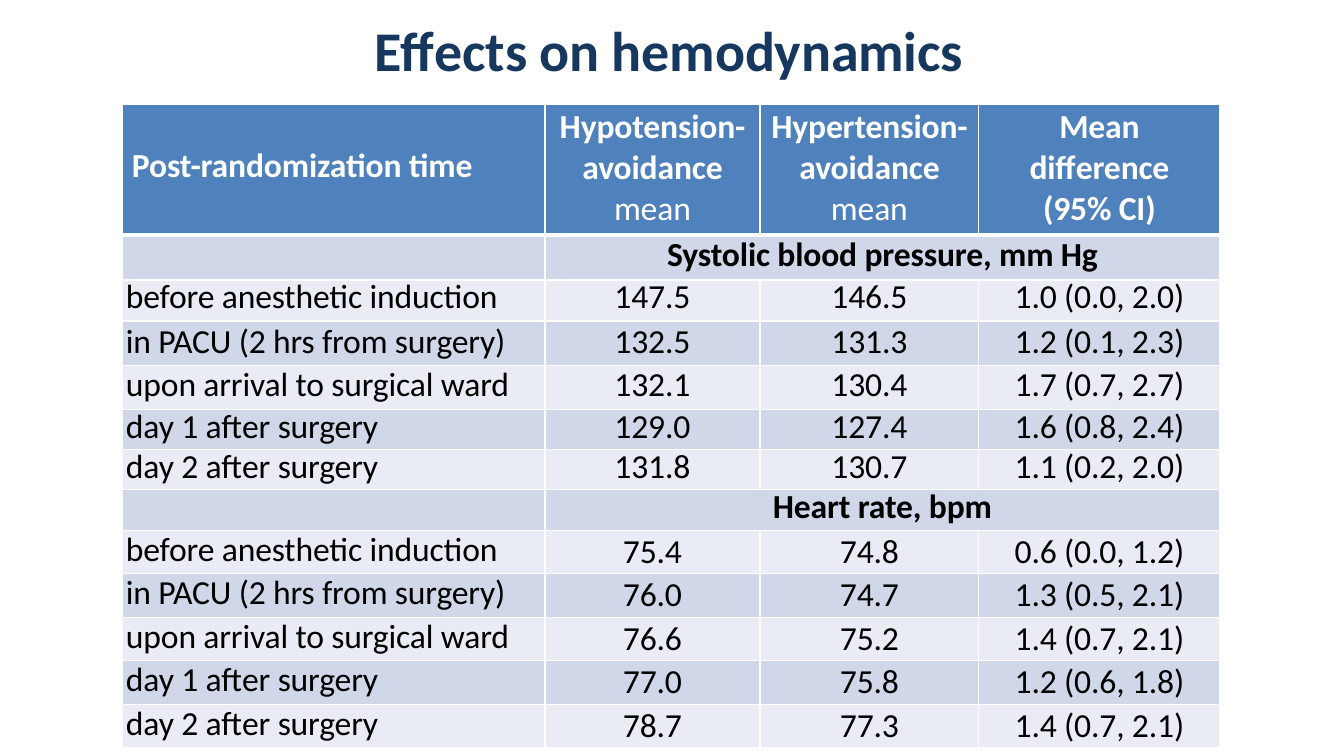
"""Build the slide on hemodynamic effects: a title over one table."""
from lxml.etree import SubElement as Sub
from pptx import Presentation
from pptx.dml.color import RGBColor
from pptx.enum.text import MSO_ANCHOR as Anchor, PP_ALIGN as Align
from pptx.oxml.ns import qn
from pptx.util import Pt

PX = 12192000 / 1344
NAVY = RGBColor(0x16, 0x37, 0x5E)
BLUE = RGBColor(0x4F, 0x81, 0xBC)
DARK = RGBColor(0xD0, 0xD7, 0xE8)
PALE = RGBColor(0xE9, 0xEC, 0xF4)
WHITE = RGBColor(0xFF, 0xFF, 0xFF)
BLACK = RGBColor(0x00, 0x00, 0x00)


def px(n):
    return round(n * PX)


def write(frame, text, tail="", size=24, color=BLACK, bold=False,
          align=Align.CENTER, before=0, line=None):
    para = frame.paragraphs[0]
    para.alignment = align
    para.space_before = Pt(before)
    if line:
        para.line_spacing = Pt(line)
    for part, heavy in ((text, bold), (tail, False)):
        if part or part is text:
            run = para.add_run()
            run.text = part
            font = run.font
            font.name, font.size, font.bold = "Calibri", Pt(size), heavy
            font.color.rgb = color
            run._r.get_or_add_rPr().set("spc", "-10")


prs = Presentation()
prs.slide_width, prs.slide_height = px(1344), px(756)
slide = prs.slides.add_slide(prs.slide_layouts[6])

title = slide.shapes.add_textbox(px(375), px(15), px(592), px(70)).text_frame
title.margin_left = title.margin_right = title.margin_bottom = 0
title.margin_top = px(1)
title.word_wrap = False
write(title, "Effects on hemodynamics", size=40, color=NAVY, bold=True,
      align=Align.LEFT, before=0.9)

widths = [423, 215, 219, 241]
heights = [131, 45, 41, 45, 44, 40, 40, 41, 43, 44, 43, 44, 43]
table = slide.shapes.add_table(len(heights), len(widths), px(122), px(104),
                               px(sum(widths)), px(sum(heights))).table
table.first_row = table.horz_banding = False
for col, width in zip(table.columns, widths):
    col.width = px(width)
for row, height in zip(table.rows, heights):
    row.height = px(height)

for r in range(len(heights)):
    for c in range(len(widths)):
        cell = table.cell(r, c)
        cell.margin_left = cell.margin_right = 0
        cell.margin_top = cell.margin_bottom = 0
        props = cell._tc.get_or_add_tcPr()
        for side in "LRTB":
            thick = (r, side) in ((0, "B"), (1, "T"))
            edge = Sub(props, qn("a:ln" + side), w=str(Pt(3 if thick else 1)))
            Sub(Sub(edge, qn("a:solidFill")), qn("a:srgbClr"), val=str(WHITE))
        cell.fill.solid()
        cell.fill.fore_color.rgb = BLUE if r == 0 else DARK if r % 2 else PALE

heads = [("Post-randomization time", "", 10),
         ("Hypotension- avoidance ", "mean", 8),
         ("Hypertension- avoidance ", "mean", 8),
         ("Mean difference (95% CI)", "", 40)]
for c, (text, tail, pad) in enumerate(heads):
    cell = table.cell(0, c)
    cell.margin_left = cell.margin_right = px(pad)
    if c:
        cell.margin_top = px(3)
    else:
        cell.vertical_anchor = Anchor.MIDDLE
        cell.margin_bottom = px(6)
    write(cell.text_frame, text, tail, color=WHITE, bold=True,
          align=Align.CENTER if c else Align.LEFT, before=2 if c else 0)

times = ["before anesthetic induction", "in PACU (2 hrs from surgery)",
         "upon arrival to surgical ward", "day 1 after surgery",
         "day 2 after surgery"]
groups = [
    (1, "Systolic blood pressure, mm Hg", None,
     [27.2, None, 28.4, 27.2, 27.2], [27.2, None, 28.4, 27.2, 27.2],
     [("147.5", "146.5", "1.0 (0.0, 2.0)"),
      ("132.5", "131.3", "1.2 (0.1, 2.3)"),
      ("132.1", "130.4", "1.7 (0.7, 2.7)"),
      ("129.0", "127.4", "1.6 (0.8, 2.4)"),
      ("131.8", "130.7", "1.1 (0.2, 2.0)")]),
    (7, "Heart rate, bpm", 27.2, [28.4] * 5, [None] * 5,
     [("75.4", "74.8", "0.6 (0.0, 1.2)"),
      ("76.0", "74.7", "1.3 (0.5, 2.1)"),
      ("76.6", "75.2", "1.4 (0.7, 2.1)"),
      ("77.0", "75.8", "1.2 (0.6, 1.8)"),
      ("78.7", "77.3", "1.4 (0.7, 2.1)")]),
]
for top, name, lead, left, right, values in groups:
    write(table.cell(top, 0).text_frame, "", line=27.2)
    band = table.cell(top, 1)
    band.merge(table.cell(top, 3))
    write(band.text_frame, name, bold=True, line=lead)
    for i, (time, trio) in enumerate(zip(times, values)):
        for c, text in enumerate((time, *trio)):
            cell = table.cell(top + 1 + i, c)
            line = right[i] if c else left[i]
            cell.margin_left = 0 if c else px(4)
            cell.margin_top = 0 if line else px(1)
            write(cell.text_frame, text, line=line,
                  align=Align.CENTER if c else Align.LEFT,
                  before=0 if line else 0.8)

prs.save("out.pptx")
